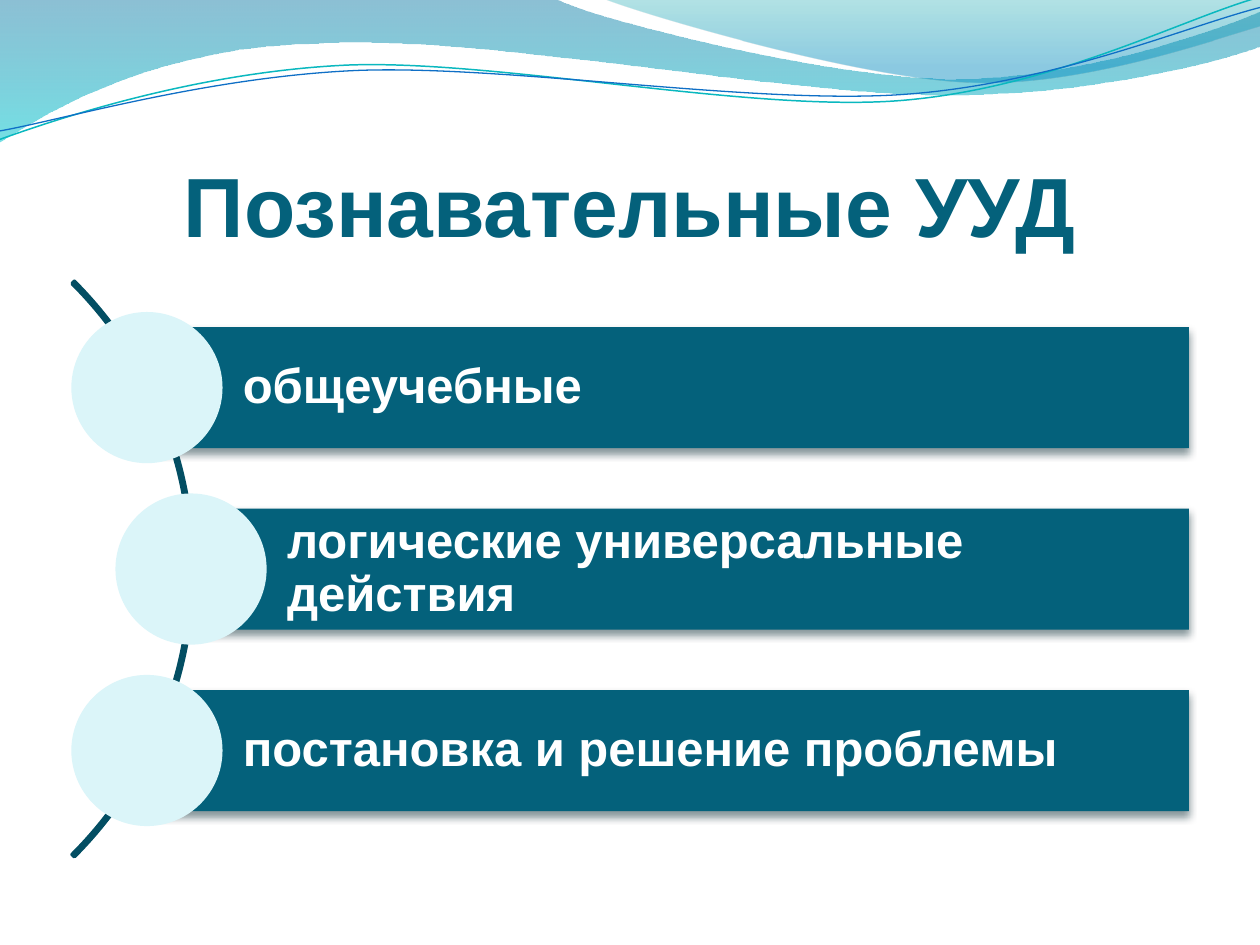
from lxml import etree
from pptx import Presentation
from pptx.dml.color import RGBColor
from pptx.enum.shapes import MSO_SHAPE as SHAPE
from pptx.enum.text import MSO_ANCHOR as ANCHOR, PP_ALIGN as ALIGN
from pptx.oxml import parse_xml
from pptx.oxml.ns import nsdecls, qn
from pptx.util import Pt

COLORS = {
    "teal": "04617B", "dark": "034E63", "pale": "DBF5F9", "white": "FFFFFF",
    "shadow": "00232C", "wave_blue": "0074A1", "wave_cyan": "00C6CF",
    "crest_teal": "00A1A9", "crest_blue": "008BBF",
    "line_teal": "0AB8BF", "line_blue": "0F6FC6",
}
FONT = "Arial"
WAVES = [
    ([(0, 0), (317, -1), (343, 12, 478, 45, 546, 45), (614, 45, 690, 19, 720, 6.5),
      (720.7, 26), (708, 32, 626, 55, 537, 54), (448, 54, 275, 20, 185, 24.5),
      (93, 26, 33, 60, -0.7, 81.4)],
     [("wave_blue", 0, 45), ("wave_cyan", 1, 55)]),
    ([(345, -0.7), (366, 8, 491, 45, 554, 47), (616, 50, 692, 23, 720, 15), (720, 0)],
     [("crest_teal", 0, 30), ("crest_blue", 0.8, 45)]),
]
STRANDS = [
    ([(-1, 80), (35, 67, 114, 41, 199, 37.2), (284, 34, 427, 64, 513, 57.6),
      (600, 51, 675, 11, 719, -1.4)], "line_teal", 0.85),
    ([(-1, 75), (34, 69, 118, 44, 204, 40.3), (290, 37, 430, 60, 516, 54),
      (602, 48, 678, 15, 720, 4.3)], "line_blue", 0.75),
]
ITEMS = [("общеучебные", 0), ("логические универсальные действия", 25.2),
         ("постановка и решение проблемы", 0)]


def rgb(name):
    return RGBColor.from_string(COLORS[name])


def add_curve(slide, outline, left, top, close):
    anchors = [(Pt(left + seg[-2]), Pt(top + seg[-1])) for seg in outline]
    builder = slide.shapes.build_freeform(*anchors[0])
    builder.add_line_segments(anchors[1:], close=close)
    sp = builder.convert_to_shape()
    sp.shadow.inherit = False
    sides = list(sp.element.iter(qn("a:lnTo")))
    for side, seg in zip(sides, outline[1:]):
        if len(seg) == 2:
            continue
        side.tag = qn("a:cubicBezTo")
        for i, (x, y) in enumerate(((seg[0], seg[1]), (seg[2], seg[3]))):
            pt = etree.Element(qn("a:pt"))
            pt.set("x", str(Pt(left + x) - sp.left))
            pt.set("y", str(Pt(top + y) - sp.top))
            side.insert(i, pt)
    return sp


def add_waves(slide, left, top):
    for outline, stops in WAVES:
        sp = add_curve(slide, outline, left, top, True)
        sp.line.fill.background()
        sp.fill.gradient()
        sp.fill.gradient_angle = 270
        for stop, (color, position, _) in zip(sp.fill.gradient_stops, stops):
            stop.color.rgb = rgb(color)
            stop.position = position
        for clr, (_, _, opacity) in zip(sp.element.spPr.iter(qn("a:srgbClr")), stops):
            etree.SubElement(clr, qn("a:alpha")).set("val", str(opacity * 1000))
    for outline, color, width in STRANDS:
        sp = add_curve(slide, outline, left, top, False)
        sp.fill.background()
        sp.line.color.rgb = rgb(color)
        sp.line.width = Pt(width)


def write(tf, text, size, color, anchor, align, margins):
    tf.word_wrap = True
    tf.vertical_anchor = anchor
    tf.margin_left, tf.margin_top, tf.margin_right, tf.margin_bottom = map(Pt, margins)
    p = tf.paragraphs[0]
    p.alignment = align
    r = p.add_run()
    r.text = text
    r.font.name, r.font.size, r.font.bold = FONT, Pt(size), True
    r.font.color.rgb = rgb(color)
    return p


def add_title(slide, left, top, width, height):
    title = slide.shapes.title
    title.left, title.top, title.width, title.height = map(Pt, (left, top, width, height))
    write(title.text_frame, "Познавательные УУД", 48, "teal",
          ANCHOR.BOTTOM, ALIGN.CENTER, (0, 3.6, 0, 0))


def add_solid(slide, kind, left, top, width, height, color):
    sp = slide.shapes.add_shape(kind, Pt(left), Pt(top), Pt(width), Pt(height))
    sp.shadow.inherit = False
    sp.fill.solid()
    sp.fill.fore_color.rgb = rgb(color)
    sp.line.fill.background()
    return sp


def drop_shadow(sp):
    effects = sp.element.spPr.find(qn("a:effectLst"))
    effects.append(parse_xml(
        f'<a:outerShdw {nsdecls("a")} blurRad="{Pt(4.5)}" dist="{Pt(3)}" dir="5400000" '
        f'rotWithShape="0"><a:srgbClr val="{COLORS["shadow"]}"><a:alpha val="48000"/>'
        '</a:srgbClr></a:outerShdw>'))


def add_arc(slide, right, middle, size):
    arc = add_solid(slide, SHAPE.BLOCK_ARC, right - size, middle - size / 2,
                    size, size, "dark")
    arc.fill.background()
    arc.line.color.rgb = rgb("dark")
    arc.line.width = Pt(2)
    for i, value in enumerate((189, 27, 0.004)):
        arc.adjustments[i] = value


def add_list(slide, left, top, width, height):
    pitch = height / (len(ITEMS) - 1 + 5 / 6)
    dot = pitch * 5 / 6
    bar = pitch * 2 / 3
    add_arc(slide, left + 69.8, top + height / 2, 465.1)
    for i, (text, indent) in enumerate(ITEMS):
        x, y = left + indent, top + i * pitch
        bar_left = x + dot / 2
        sp = add_solid(slide, SHAPE.RECTANGLE, bar_left, y + (dot - bar) / 2,
                       left + width - bar_left, bar, "teal")
        drop_shadow(sp)
        p = write(sp.text_frame, text, 28, "white", ANCHOR.MIDDLE, ALIGN.LEFT,
                  (54.8, 5.6, 5.6, 5.6))
        p.line_spacing = 0.9
        add_solid(slide, SHAPE.OVAL, x, y, dot, dot, "pale")


def main():
    prs = Presentation()
    prs.slide_width, prs.slide_height = Pt(720), Pt(540)
    slide = prs.slides.add_slide(prs.slide_layouts[5])
    add_waves(slide, 0, 0)
    add_title(slide, 36, 55.4, 648, 90)
    add_list(slide, 40.8, 178.3, 638.6, 293.8)
    prs.save("out.pptx")


if __name__ == "__main__":
    main()
